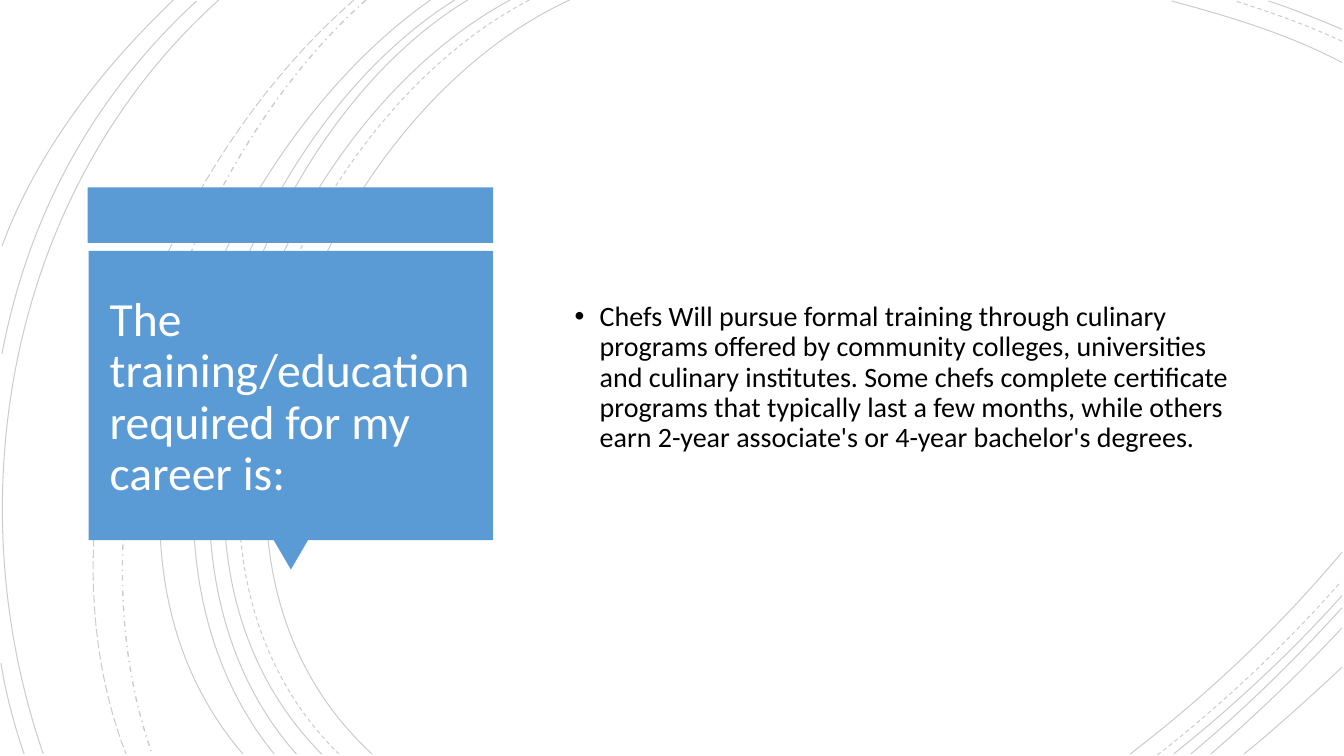
from lxml import etree
from pptx import Presentation, util as u
from pptx.dml.color import RGBColor
from pptx.enum import dml, shapes, text
from pptx.oxml.ns import qn

TITLE = "The training/education required for my career is:"
BODY = ("Chefs Will pursue formal training through culinary programs offered by "
        "community colleges, universities and culinary institutes. Some chefs complete "
        "certificate programs that typically last a few months, while others earn "
        "2-year associate's or 4-year bachelor's degrees.")
BLUE, WHITE, BLACK = "5B9BD5", "FFFFFF", "000000"
FONT = "Calibri"

SOLID, DASH = dml.MSO_LINE.SOLID, dml.MSO_LINE.DASH
DASH_DOT, LONG_DASH = dml.MSO_LINE.DASH_DOT, dml.MSO_LINE.LONG_DASH

ARCS = [
    (SOLID, 0.75, [
        ((5.65, 0), (3.15, 1.15), (1.43, 5.4), (3.69, 7.48)),
        ((13.31, 0.62), (12.78, 0.34), (12.18, 0.16), (11.62, 0.01)),
        ((11.21, 7.48), (11.97, 6.9), (12.69, 6.22), (13.31, 5.48)),
    ]),
    (DASH, 0.75, [
        ((5.25, 0), (2.85, 1.25), (1.23, 5.37), (3.36, 7.48)),
        ((13.31, 0.41), (12.97, 0.25), (12.6, 0.12), (12.25, 0.01)),
        ((11.48, 7.49), (12.13, 6.98), (12.75, 6.4), (13.3, 5.77)),
    ]),
    (SOLID, 0.75, [
        ((5.06, 0), (2.7, 1.27), (1.1, 5.37), (3.19, 7.48)),
        ((13.31, 0.29), (13.07, 0.19), (12.83, 0.09), (12.58, 0.01)),
        ((11.64, 7.48), (12.23, 7.01), (12.8, 6.48), (13.31, 5.91)),
        ((4.64, 0), (2.44, 1.33), (1.1, 5.41), (2.94, 7.48)),
        ((11.81, 7.48), (12.34, 7.04), (12.84, 6.55), (13.31, 6.03)),
        ((4.51, 0), (2.31, 1.38), (0.97, 5.33), (2.72, 7.48)),
        ((12.01, 7.48), (12.46, 7.09), (12.9, 6.67), (13.31, 6.23)),
        ((4.27, 0), (2.17, 1.47), (0.53, 5.29), (2.41, 7.48)),
        ((12.34, 7.48), (12.67, 7.21), (12.99, 6.92), (13.31, 6.62)),
    ]),
    (DASH_DOT, 1, [((3.63, 0), (1.76, 1.66), (0.65, 5.09), (1.51, 7.48))]),
    (LONG_DASH, 0.75, [((3.51, 0), (1.57, 1.69), (0.29, 4.99), (1.25, 7.48))]),
    (SOLID, 0.75, [
        ((2.17, 0), (0.11, 1.85), (-0.46, 4.9), (0.43, 7.48)),
        ((1.95, 0.01), (0.92, 0.96), (0.28, 2.14), (0.02, 3.51)),
        ((0.01, 6.58), (0.06, 6.89), (0.14, 7.19), (0.24, 7.48)),
        ((1.72, 0), (1, 0.69), (0.37, 1.5), (0.02, 2.44)),
    ]),
]

CALLOUT = [
    (shapes.MSO_SHAPE.RECTANGLE, (0.87, 1.86, 4.02, 0.55), 0),
    (shapes.MSO_SHAPE.ISOSCELES_TRIANGLE, (2.71, 5.35, 0.35, 0.3), 180),
    (shapes.MSO_SHAPE.RECTANGLE, (0.88, 2.49, 4.01, 2.87), 0),
]


def color(value):
    return RGBColor.from_string(value)


def add_arc(s, points, dash, width):
    start, *rest = [(u.Inches(x), u.Inches(y)) for x, y in points]
    builder = s.shapes.build_freeform(*start)
    builder.add_line_segments(rest, close=False)
    sp = builder.convert_to_shape()
    outline = sp._element.find(".//" + qn("a:path"))
    segments = outline.findall(qn("a:lnTo"))
    curve = etree.SubElement(outline, qn("a:cubicBezTo"))
    for segment in segments:
        curve.append(segment[0])
        outline.remove(segment)
    sp.shadow.inherit = False
    sp.fill.background()
    sp.line.color.rgb = color(BLACK)
    sp.line.width = u.Pt(width)
    sp.line.dash_style = dash
    clr = sp._element.spPr.find(".//" + qn("a:srgbClr"))
    etree.SubElement(clr, qn("a:alpha"), val="20000")


def add_block(s, kind, box, rotation):
    sp = s.shapes.add_shape(kind, *map(u.Inches, box))
    sp.shadow.inherit = False
    sp.rotation = rotation
    sp.fill.solid()
    sp.fill.fore_color.rgb = color(BLUE)
    sp.line.fill.background()


def add_text(s, box, words, size, fill):
    tf = s.shapes.add_textbox(*map(u.Inches, box)).text_frame
    tf.word_wrap = True
    tf.vertical_anchor = text.MSO_ANCHOR.MIDDLE
    p = tf.paragraphs[0]
    p.text = words
    p.line_spacing = 0.9
    p.font.name = FONT
    p.font.size = u.Pt(size)
    p.font.color.rgb = color(fill)
    return p


def add_bullet(p):
    pPr = p._p.get_or_add_pPr()
    pPr.set("marL", str(u.Inches(0.25)))
    pPr.set("indent", str(u.Inches(-0.25)))
    defaults = pPr.find(qn("a:defRPr"))
    for tag, key, value in (("a:buFont", "typeface", "Arial"), ("a:buChar", "char", "•")):
        defaults.addprevious(etree.Element(qn(tag), {key: value}))


def main():
    prs = Presentation()
    prs.slide_width, prs.slide_height = u.Inches(13.33), u.Inches(7.5)
    s = prs.slides.add_slide(prs.slide_layouts[6])
    for dash, width, curves in ARCS:
        for points in curves:
            add_arc(s, points, dash, width)
    for kind, box, rotation in CALLOUT:
        add_block(s, kind, box, rotation)
    add_text(s, (0.99, 2.64, 3.77, 2.62), TITLE, 34, WHITE)
    p = add_text(s, (5.6, 0.88, 6.87, 5.74), BODY, 20, BLACK)
    p.space_before = u.Pt(10)
    add_bullet(p)
    prs.save("out.pptx")


if __name__ == "__main__":
    main()
